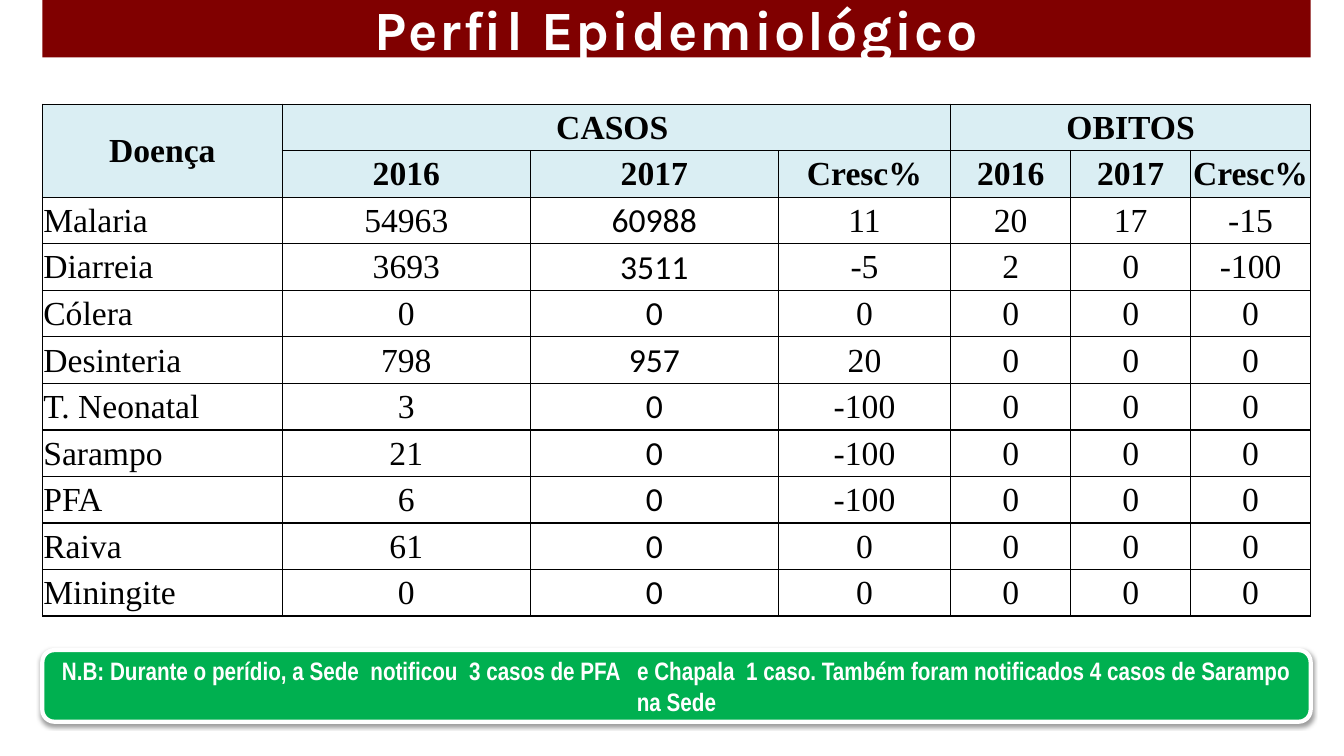
from dataclasses import dataclass

from lxml import etree
from pptx import Presentation
from pptx.dml.color import RGBColor
from pptx.enum.shapes import MSO_SHAPE
from pptx.enum.text import MSO_ANCHOR, MSO_AUTO_SIZE, PP_ALIGN
from pptx.oxml.ns import qn
from pptx.util import Inches, Pt

ROUNDED = MSO_SHAPE.ROUNDED_RECTANGLE
MIDDLE = MSO_ANCHOR.MIDDLE
NO_AUTOFIT = MSO_AUTO_SIZE.NONE
CENTER = PP_ALIGN.CENTER
JUSTIFY = PP_ALIGN.JUSTIFY

WHITE = RGBColor(0xFF, 0xFF, 0xFF)
BLACK = RGBColor(0x00, 0x00, 0x00)
MAROON = RGBColor(0x80, 0x00, 0x00)
GREEN = RGBColor(0x00, 0xB0, 0x50)
PALE_BLUE = RGBColor(0xDA, 0xEE, 0xF3)

SLIDE_WIDTH = Inches(13.33)
SLIDE_HEIGHT = Inches(7.5)
GRID_UNITS = 100
SERIF = "Times New Roman"
COLUMN_WEIGHTS = (238, 246, 246, 171, 119, 119, 119)
HEADER_ROWS = 2
CASES_2017_COLUMN = 2
NOTE = (
    "N.B: Durante o perídio, a Sede  notificou  3 casos de PFA   e Chapala  1 caso. "
    "Também foram notificados 4 casos de Sarampo na Sede"
)


@dataclass(frozen=True)
class Area:
    top: float
    height: float
    left: float = 3.15
    width: float = 94.37

    def frame(self) -> tuple[int, int, int, int]:
        return (
            int(SLIDE_WIDTH * self.left / GRID_UNITS),
            int(SLIDE_HEIGHT * self.top / GRID_UNITS),
            int(SLIDE_WIDTH * self.width / GRID_UNITS),
            int(SLIDE_HEIGHT * self.height / GRID_UNITS),
        )


@dataclass(frozen=True)
class Heading:
    text: str
    row: int
    column: int
    row_span: int = 1
    column_span: int = 1


@dataclass(frozen=True)
class Disease:
    name: str
    cases: tuple[int, int, int]
    deaths: tuple[int, int, int] = (0, 0, 0)


TITLE_AREA = Area(0, 7.6)
TABLE_AREA = Area(13.8, 67.73)
NOTE_AREA = Area(86, 9.47)

HEADINGS = [
    Heading("Doença", 0, 0, row_span=2),
    Heading("CASOS ", 0, 1, column_span=3),
    Heading("OBITOS", 0, 4, column_span=3),
] + [
    Heading(text, 1, column)
    for column, text in enumerate(("2016", "2017", "Cresc%") * 2, start=1)
]

DISEASES = [
    Disease("Malaria", (54963, 60988, 11), (20, 17, -15)),
    Disease("Diarreia", (3693, 3511, -5), (2, 0, -100)),
    Disease("Cólera", (0, 0, 0)),
    Disease("Desinteria", (798, 957, 20)),
    Disease("T. Neonatal", (3, 0, -100)),
    Disease("Sarampo", (21, 0, -100)),
    Disease("PFA", (6, 0, -100)),
    Disease("Raiva", (61, 0, 0)),
    Disease("Miningite", (0, 0, 0)),
]


def write_text(frame, text: str, *, font: str, size: float, color: RGBColor = BLACK,
               bold: bool = False, align=CENTER, spacing: float = 0) -> None:
    para = frame.paragraphs[0]
    para.alignment = align
    span = para.add_run()
    span.text = text
    span.font.name = font
    span.font.size = Pt(size)
    span.font.bold = bold
    span.font.color.rgb = color
    if spacing:
        span.font._element.set("spc", str(int(spacing * 100)))


def fill_shape(box, color: RGBColor) -> None:
    box.fill.solid()
    box.fill.fore_color.rgb = color


def add_title(page) -> None:
    title = page.shapes.title
    title.left, title.top, title.width, title.height = TITLE_AREA.frame()
    fill_shape(title, MAROON)
    frame = title.text_frame
    frame.auto_size = NO_AUTOFIT
    frame.vertical_anchor = MIDDLE
    write_text(frame, "Perfil Epidemiológico", font="Karla", size=39.6,
               color=WHITE, bold=True, spacing=1.5)


def add_shadow(box) -> None:
    box.shadow.inherit = False
    effects = box._element.spPr.find(qn("a:effectLst"))
    shadow = etree.SubElement(effects, qn("a:outerShdw"), blurRad=str(Pt(3.1)),
                              dist=str(Pt(1.6)), dir="5400000", rotWithShape="0")
    tint = etree.SubElement(shadow, qn("a:srgbClr"), val=str(BLACK))
    etree.SubElement(tint, qn("a:alpha"), val="38000")


def add_note(page) -> None:
    box = page.shapes.add_shape(ROUNDED, *NOTE_AREA.frame())
    fill_shape(box, GREEN)
    box.line.color.rgb = WHITE
    box.line.width = Pt(3)
    add_shadow(box)
    box.text_frame.word_wrap = True
    box.text_frame.vertical_anchor = MIDDLE
    write_text(box.text_frame, NOTE, font="Arial Narrow", size=18, color=WHITE, bold=True)


def format_cell(cell, is_header: bool) -> None:
    properties = cell._tc.get_or_add_tcPr()
    for side in ("a:lnL", "a:lnR", "a:lnT", "a:lnB"):
        border = etree.SubElement(properties, qn(side), w=str(Pt(1)))
        paint = etree.SubElement(border, qn("a:solidFill"))
        etree.SubElement(paint, qn("a:srgbClr"), val=str(BLACK))
    if is_header:
        fill_shape(cell, PALE_BLUE)
    else:
        cell.fill.background()
    cell.vertical_anchor = MIDDLE
    cell.margin_left = cell.margin_right = cell.margin_top = Inches(0.01)
    cell.margin_bottom = 0


def add_disease_table(page) -> None:
    row_count = HEADER_ROWS + len(DISEASES)
    left, top, width, height = TABLE_AREA.frame()
    table = page.shapes.add_table(row_count, len(COLUMN_WEIGHTS),
                                  left, top, width, height).table
    table.first_row = table.horz_banding = False
    for column, weight in zip(table.columns, COLUMN_WEIGHTS):
        column.width = int(width * weight / sum(COLUMN_WEIGHTS))
    for row_index, row in enumerate(table.rows):
        row.height = height // row_count
        for cell in row.cells:
            format_cell(cell, row_index < HEADER_ROWS)

    for heading in HEADINGS:
        cell = table.cell(heading.row, heading.column)
        if heading.row_span > 1 or heading.column_span > 1:
            cell.merge(table.cell(heading.row + heading.row_span - 1,
                                  heading.column + heading.column_span - 1))
        write_text(cell.text_frame, heading.text, font=SERIF, size=24, bold=True)

    for row_index, disease in enumerate(DISEASES, start=HEADER_ROWS):
        values = (disease.name, *disease.cases, *disease.deaths)
        for column_index, value in enumerate(values):
            write_text(table.cell(row_index, column_index).text_frame, str(value),
                       font="Calibri" if column_index == CASES_2017_COLUMN else SERIF,
                       size=24, align=CENTER if column_index else JUSTIFY)


def main() -> None:
    deck = Presentation()
    deck.slide_width = SLIDE_WIDTH
    deck.slide_height = SLIDE_HEIGHT
    page = deck.slides.add_slide(deck.slide_layouts[5])
    add_title(page)
    add_note(page)
    add_disease_table(page)
    deck.save("out.pptx")


if __name__ == "__main__":
    main()
